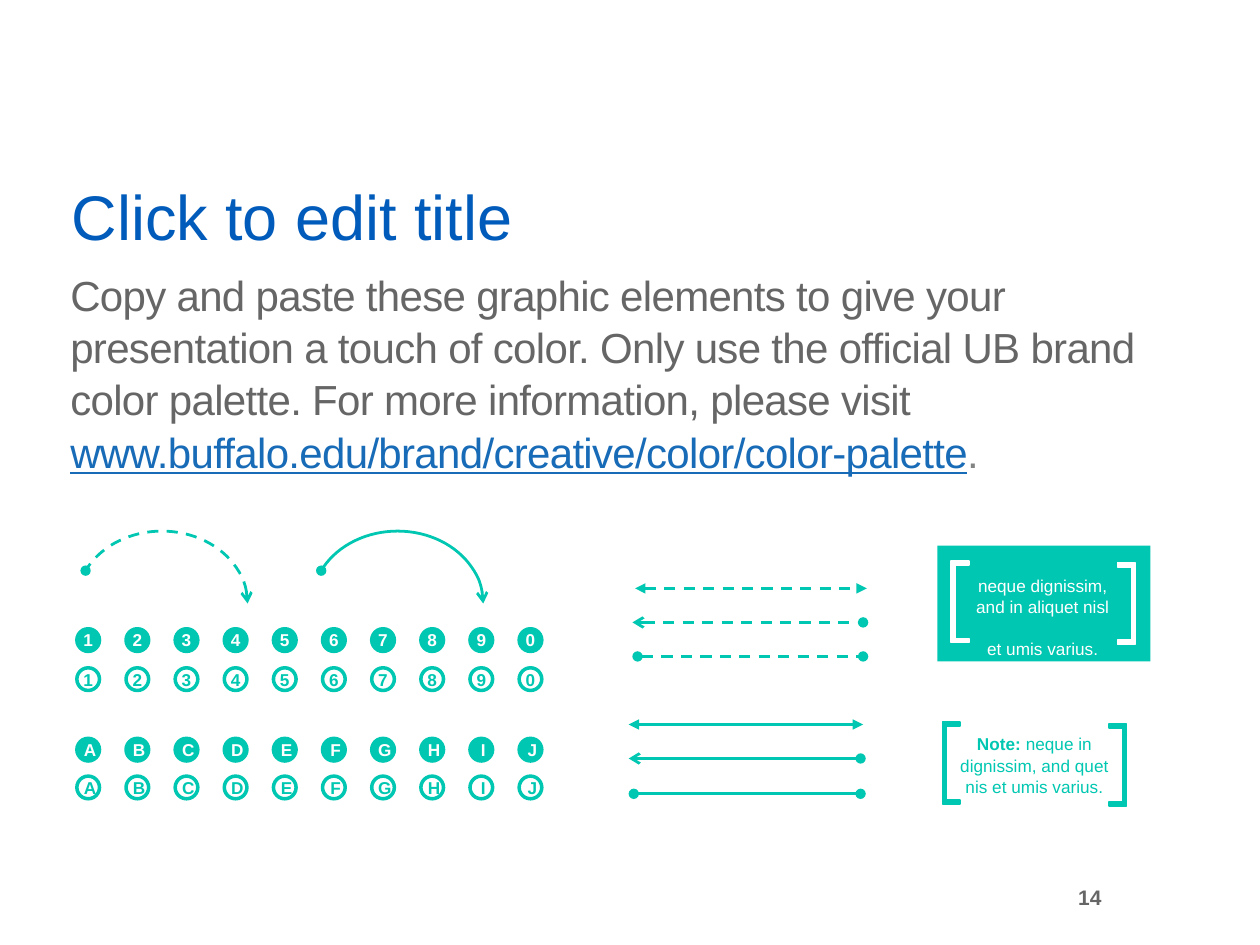
from lxml.etree import SubElement
from pptx import Presentation
from pptx.dml.color import RGBColor
from pptx.enum.dml import MSO_LINE
from pptx.enum.shapes import MSO_CONNECTOR, MSO_SHAPE as SHAPE
from pptx.enum.text import MSO_ANCHOR as ANCHOR, PP_ALIGN as ALIGN
from pptx.oxml.ns import qn
from pptx.util import Inches, Pt

TEAL = RGBColor(0x00, 0xC7, 0xB1)
WHITE = RGBColor(0xFF, 0xFF, 0xFF)
BLUE = RGBColor(0x00, 0x5B, 0xBB)
LINK_BLUE = RGBColor(0x18, 0x6B, 0xB7)
GRAY = RGBColor(0x66, 0x66, 0x66)
LIGHT_GRAY = RGBColor(0x82, 0x83, 0x83)

LINE_WIDTH = 1.6
SMALL = 9.8
BADGE_SIZE = 0.18
BADGE_STEP = 0.39
# Left bracket outline, as shares of its box
BRACKET = [(1, 0), (0, 0), (0, 1), (1, 1), (1, 0.95), (0.2, 0.95), (0.2, 0.05), (1, 0.05)]
BRACKET_WIDTH, BRACKET_HEIGHT = 0.14, 0.65


def inches(box):
    return [Inches(length) for length in box]


def style_para(para, size, color, bold=False, align=ALIGN.LEFT, spacing=None):
    para.alignment = align
    para.line_spacing = spacing
    para.font.name = "Arial"
    para.font.size = Pt(size)
    para.font.bold = bold
    para.font.color.rgb = color


def add_text(page, box, spans, size, color, anchor=ANCHOR.TOP, **style):
    """Add a one-paragraph text box and return its runs."""
    frame = page.shapes.add_textbox(*inches(box)).text_frame
    frame.word_wrap = True
    frame.vertical_anchor = anchor
    para = frame.paragraphs[0]
    for index, words in enumerate(spans):
        for part, line in enumerate(words.split("\n")):
            if part:
                para.add_line_break()
            para.add_run().text = line
    style_para(para, size, color, **style)
    return para.runs


def style_line(shape, head, tail, dashed):
    """Colour the stroke, then set the ends: head at the start, tail at the finish."""
    shape.line.color.rgb = TEAL
    shape.line.width = Pt(LINE_WIDTH)
    if dashed:
        shape.line.dash_style = MSO_LINE.DASH
    stroke = shape.line._get_or_add_ln()
    for tag, kind in (("a:headEnd", head), ("a:tailEnd", tail)):
        SubElement(stroke, qn(tag), type=kind)


def add_heading(page, box):
    add_text(page, box, ["Click to edit title"], 36, BLUE, ANCHOR.BOTTOM, spacing=0.9)


def add_intro(page, box):
    spans = add_text(page, box, [
        "Copy and paste these graphic elements to give your presentation a touch of color. "
        "Only use the official UB brand color palette. For more information, please visit ",
        "www.buffalo.edu/brand/creative/color/color-palette",
        "."], 24, GRAY, spacing=1.04)
    for span in spans:
        span.font._element.set("spc", "-40")
    spans[1].font.color.rgb = LINK_BLUE
    spans[1].font.underline = True
    spans[2].font.color.rgb = LIGHT_GRAY


def add_curved_arrow(page, box, dashed):
    arc = page.shapes.add_shape(SHAPE.ARC, *inches(box))
    arc.shadow.inherit = False
    arc.fill.background()
    arc.adjustments[0] = 162
    arc.adjustments[1] = 40.02
    arc.rotation = 270
    arc._element.spPr.find(qn("a:xfrm")).set("flipV", "1")
    style_line(arc, "arrow", "oval", dashed)


def add_badge_row(page, left, top, labels, filled, nudge=0):
    for column, label in enumerate(labels):
        box = (left + column * BADGE_STEP, top, BADGE_SIZE, BADGE_SIZE)
        badge = page.shapes.add_shape(SHAPE.OVAL, *inches(box))
        badge.shadow.inherit = False
        badge.line.color.rgb = TEAL
        badge.line.width = Pt(2)
        if filled:
            badge.fill.solid()
            badge.fill.fore_color.rgb = TEAL
        else:
            badge.fill.background()
        frame = badge.text_frame
        frame.margin_right = frame.margin_top = frame.margin_bottom = 0
        frame.margin_left = Inches(nudge)
        frame.word_wrap = False
        frame.vertical_anchor = ANCHOR.MIDDLE
        frame.text = label
        style_para(frame.paragraphs[0], SMALL, WHITE if filled else TEAL, True, ALIGN.CENTER)


def add_straight_arrow(page, start, end, top, head, tail, dashed):
    ends = inches((start, top, end, top))
    line = page.shapes.add_connector(MSO_CONNECTOR.STRAIGHT, *ends)
    style_line(line, head, tail, dashed)
    SubElement(line._element.spPr, qn("a:effectLst"))


def add_bracket(page, left, top, color, mirrored):
    points = [(Inches(left + BRACKET_WIDTH * (1 - x if mirrored else x)),
               Inches(top + BRACKET_HEIGHT * y)) for x, y in BRACKET]
    outline = page.shapes.build_freeform(*points[0])
    outline.add_line_segments(points[1:], close=True)
    bracket = outline.convert_to_shape()
    bracket.shadow.inherit = False
    bracket.fill.solid()
    bracket.fill.fore_color.rgb = color
    bracket.line.color.rgb = color
    bracket.line.width = Pt(1)


def add_bracketed_note(page, box, text_box, spans, color):
    """Set text between brackets at the two sides of the box."""
    left, top, width = box
    add_bracket(page, left, top, color, False)
    add_bracket(page, left + width - BRACKET_WIDTH, top + 0.015, color, True)
    return add_text(page, text_box, spans, SMALL, color, align=ALIGN.CENTER, spacing=1.03)


def add_panel(page, box):
    panel = page.shapes.add_shape(SHAPE.RECTANGLE, *inches(box))
    panel.shadow.inherit = False
    panel.fill.solid()
    panel.fill.fore_color.rgb = TEAL
    panel.line.fill.background()


def main():
    deck = Presentation()
    deck.slide_width, deck.slide_height = Inches(10), Inches(7.5)
    page = deck.slides.add_slide(deck.slide_layouts[6])

    add_heading(page, (0.47, 1.12, 3.72, 0.95))
    add_intro(page, (0.46, 2.07, 9.32, 2.61))

    for left, dashed in ((0.71, True), (2.58, False)):
        add_curved_arrow(page, (left, 4.11, 1.15, 1.36), dashed)

    for labels, tops, nudge in (("1234567890", (4.99, 5.3), 0),
                                ("ABCDEFGHIJ", (5.86, 6.16), 0.03)):
        for top, filled in zip(tops, (True, False)):
            add_badge_row(page, 0.61, top, labels, filled, nudge)

    for start, end, top, head, tail, dashed in (
            (5.04, 6.88, 4.67, "triangle", "triangle", True),
            (5.02, 6.85, 4.94, "arrow", "oval", True),
            (5.06, 6.85, 5.21, "oval", "oval", True),
            (4.99, 6.85, 5.75, "triangle", "triangle", False),
            (4.99, 6.83, 6.02, "arrow", "oval", False),
            (5.03, 6.83, 6.3, "oval", "oval", False)):
        add_straight_arrow(page, start, end, top, head, tail, dashed)

    add_panel(page, (7.44, 4.33, 1.69, 0.92))
    add_bracketed_note(page, (7.55, 4.45, 1.46), (7.63, 4.51, 1.29, 0.59),
                       ["neque dignissim, and in aliquet nisl \net umis varius."], WHITE)
    note = add_bracketed_note(page, (7.48, 5.73, 1.46), (7.48, 5.77, 1.46, 0.59),
                              ["Note: ", "neque in dignissim, and quet nis et umis varius."], TEAL)
    note[0].font.bold = True

    add_text(page, (8.25, 6.83, 0.59, 0.58), ["14"], 12, GRAY, ANCHOR.MIDDLE,
             bold=True, align=ALIGN.RIGHT)
    deck.save("out.pptx")


if __name__ == "__main__":
    main()
